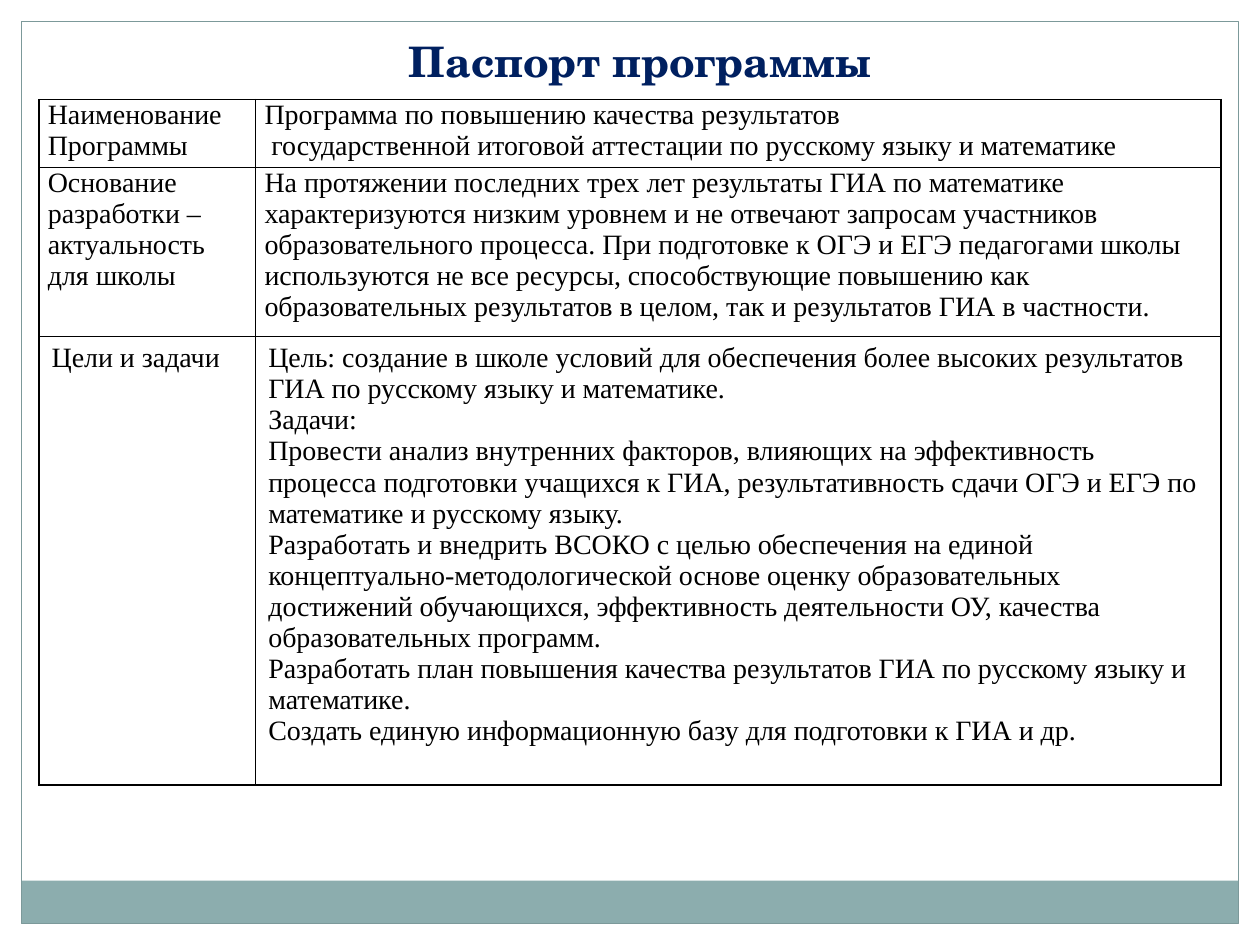
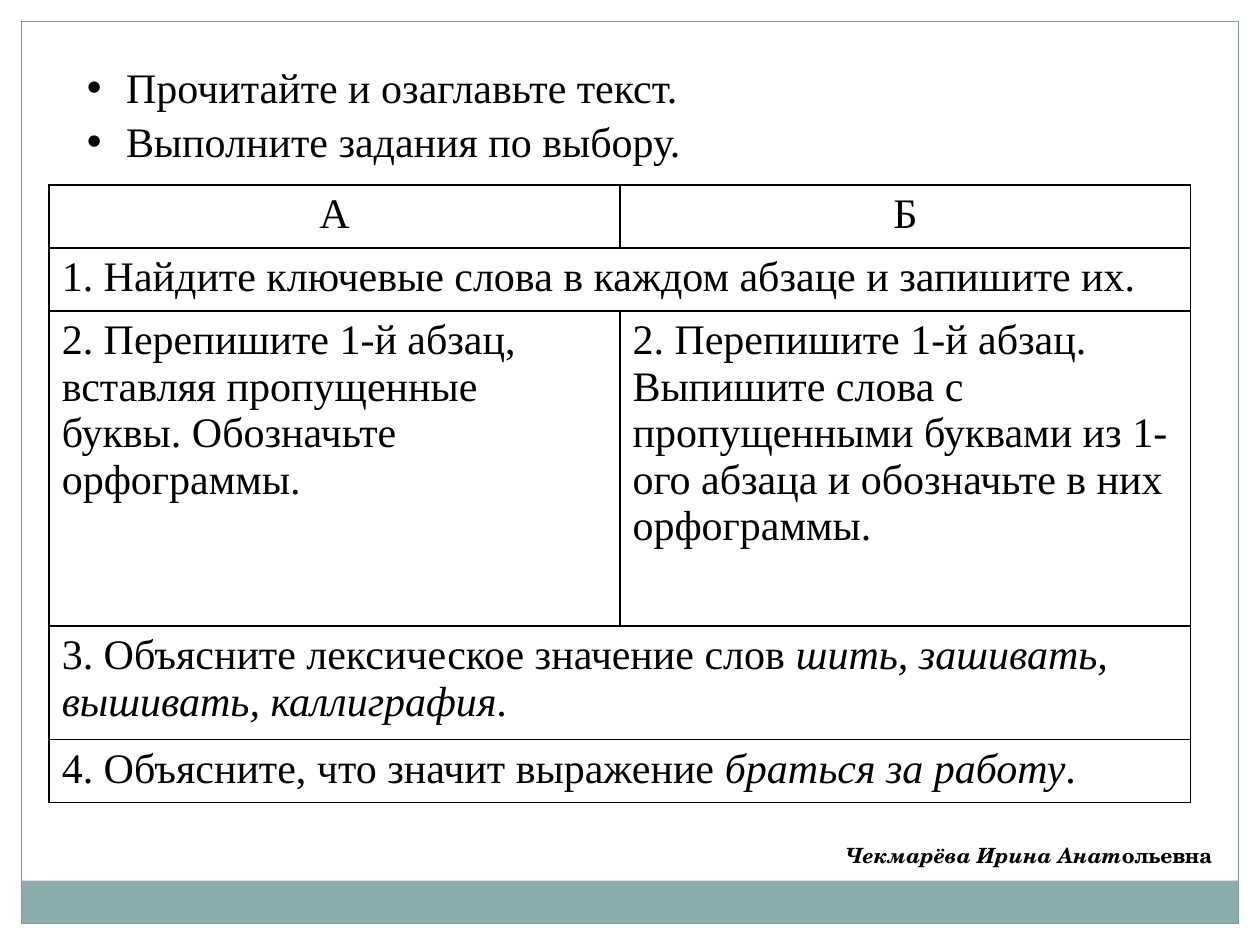
from lxml import etree
from pptx import Presentation
from pptx.dml.color import RGBColor
from pptx.enum import shapes, text
from pptx.oxml import ns
from pptx.util import Inches, Pt

SERIF, DISPLAY = "Times New Roman", "TeX Gyre Schola"
WHITE, BLACK, NAVY = "FFFFFF", "000000", "002060"
BAND, FRAME = "8CADAE", "7C999A"
NARROW_MARGINS = (0.07, 0, 0.08, 0)
NORMAL_MARGINS = (0.1, 0.05, 0.1, 0.05)

PASSPORT = [
    ["Наименование Программы",
     "Программа по повышению качества результатов\n"
     " государственной итоговой аттестации по русскому языку и математике"],
    ["Основание разработки – актуальность для школы",
     "На протяжении последних трех лет результаты ГИА по математике характеризуются "
     "низким уровнем и не отвечают запросам участников образовательного процесса. "
     "При подготовке к ОГЭ и ЕГЭ педагогами школы используются не все ресурсы, "
     "способствующие повышению как образовательных результатов в целом, так и "
     "результатов ГИА в частности."],
    ["Цели и задачи",
     "Цель: создание в школе условий для обеспечения более высоких результатов ГИА "
     "по русскому языку и математике.\n"
     "Задачи:\n"
     "Провести анализ внутренних факторов, влияющих на эффективность процесса "
     "подготовки учащихся к ГИА, результативность сдачи ОГЭ и ЕГЭ по математике и "
     "русскому языку.\n"
     "Разработать и внедрить ВСОКО с целью обеспечения на единой "
     "концептуально-методологической основе оценку образовательных достижений "
     "обучающихся, эффективность деятельности ОУ, качества образовательных программ.\n"
     "Разработать план повышения качества результатов ГИА по русскому языку и "
     "математике.\n"
     "Создать единую информационную базу для подготовки к ГИА и др."],
]

# Asterisks enclose italics; a row with one entry spans the table
TASKS = [
    ["А", "Б"],
    ["1. Найдите ключевые слова в каждом абзаце и запишите их."],
    ["2. Перепишите 1-й абзац, вставляя пропущенные буквы. Обозначьте орфограммы.",
     "2. Перепишите 1-й абзац. Выпишите слова с пропущенными буквами из 1-ого абзаца "
     "и обозначьте в них орфограммы."],
    ["3. Объясните лексическое значение слов *шить, зашивать, вышивать, каллиграфия*."],
    ["4. Объясните, что значит выражение *браться за работу*."],
]


def color(value):
    return RGBColor.from_string(value)


def place(shape, box):
    shape.left, shape.top, shape.width, shape.height = map(Inches, box)


def write(frame, content, size, font=SERIF, ink=BLACK, align=text.PP_ALIGN.LEFT, bold=False):
    """Fill a text frame: one paragraph per line, italics between asterisks."""
    frame.word_wrap = True
    for number, line in enumerate(content.split("\n")):
        paragraph = frame.paragraphs[0] if number == 0 else frame.add_paragraph()
        paragraph.alignment = align
        paragraph.font.size, paragraph.font.name = Pt(size), font
        paragraph.font.bold = bold
        paragraph.font.color.rgb = color(ink)
        for position, part in enumerate(line.split("*")):
            if part:
                run = paragraph.add_run()
                run.text = part
                if position % 2:
                    run.font.italic = True


def add_rectangle(slide, box, fill=None, line=None):
    shape = slide.shapes.add_shape(shapes.MSO_SHAPE.RECTANGLE, *map(Inches, box))
    shape.shadow.inherit = False
    if fill:
        shape.fill.solid()
        shape.fill.fore_color.rgb = color(fill)
    else:
        shape.fill.background()
    if line:
        shape.line.color.rgb = color(line)
        shape.line.width = Pt(0.75)
    else:
        shape.line.fill.background()
    return shape


def decorate_master(presentation, slide):
    """Draw the margins, bottom band and frame, then move them to the master."""
    edge = 0.17
    parts = [add_rectangle(slide, box, WHITE) for box in (
        (0, 0, 10, edge), (10 - edge, 0, edge, 7.5), (0, 0, edge, 7.5))]
    parts.append(add_rectangle(slide, (edge, 6.99, 9.66, 0.34), BAND))
    parts.append(add_rectangle(slide, (edge, edge, 9.66, 7.16), line=FRAME))
    tree = presentation.slide_master.shapes.element
    for number, part in enumerate(parts):
        part.element.nvSpPr.cNvPr.set("id", str(100 + number))
        tree.insert(2 + number, part.element)


def border_cell(cell):
    properties = cell._tc.get_or_add_tcPr()
    for number, side in enumerate(("lnL", "lnR", "lnT", "lnB")):
        line = etree.Element(ns.qn(f"a:{side}"), w=str(Pt(1)))
        fill = etree.SubElement(line, ns.qn("a:solidFill"))
        etree.SubElement(fill, ns.qn("a:srgbClr"), val=BLACK)
        properties.insert(number, line)


def add_grid(slide, left, top, widths, heights, rows, size, margins, header=False):
    """Add a plain bordered table; margins holds one set per row."""
    table = slide.shapes.add_table(
        len(heights), len(widths), Inches(left), Inches(top),
        Inches(sum(widths)), Inches(sum(heights))).table
    table.first_row = table.horz_banding = False
    for column, width in zip(table.columns, widths):
        column.width = Inches(width)
    for index, (row, height) in enumerate(zip(rows, heights)):
        table.rows[index].height = Inches(height)
        for cell in table.rows[index].cells:
            cell.fill.background()
            border_cell(cell)
            (cell.margin_left, cell.margin_top,
             cell.margin_right, cell.margin_bottom) = map(Inches, margins[index])
        if len(row) < len(widths):
            table.cell(index, 0).merge(table.cell(index, len(widths) - 1))
        centred = header and index == 0
        align = text.PP_ALIGN.CENTER if centred else text.PP_ALIGN.LEFT
        for column, content in enumerate(row):
            write(table.cell(index, column).text_frame, content, size, align=align)


def build_passport(slide):
    title = slide.shapes.title
    place(title, (0.47, 0.23, 9.22, 0.5))
    write(title.text_frame, "Паспорт программы", 24, DISPLAY, NAVY,
          text.PP_ALIGN.CENTER, bold=True)
    add_grid(slide, 0.31, 0.79, (1.72, 7.66), (0.54, 1.34, 3.56), PASSPORT, 16,
             (NARROW_MARGINS, NARROW_MARGINS, NORMAL_MARGINS))


def build_tasks(slide):
    # Instructions
    title = slide.shapes.title
    title.element.getparent().remove(title.element)
    body = slide.placeholders[1]
    place(body, (0.59, 0.44, 8.98, 1.31))
    write(body.text_frame, "Прочитайте и озаглавьте текст.\nВыполните задания по выбору.", 24)
    for paragraph in body.text_frame.paragraphs:
        paragraph.space_before = Pt(2)
        properties = paragraph._p.get_or_add_pPr()
        properties.set("marL", str(Inches(0.31)))
        properties.set("indent", str(-Inches(0.31)))
    # Tasks
    add_grid(slide, 0.39, 1.47, (4.53, 4.53), (0.5, 0.5, 2.5, 0.9, 0.5), TASKS, 24,
             [NORMAL_MARGINS] * len(TASKS), header=True)
    # Author
    author = slide.shapes.add_textbox(*map(Inches, (5, 6.64, 4.72, 0.3)))
    write(author.text_frame, "*Чекмарёва Ирина Анат*ольевна", 12, DISPLAY,
          align=text.PP_ALIGN.RIGHT, bold=True)


def main():
    presentation = Presentation()
    presentation.slide_width, presentation.slide_height = Inches(10), Inches(7.5)
    title_and_content, title_only = (presentation.slide_layouts[i] for i in (1, 5))
    passport = presentation.slides.add_slide(title_only)
    decorate_master(presentation, passport)
    build_passport(passport)
    build_tasks(presentation.slides.add_slide(title_and_content))
    presentation.save("out.pptx")


if __name__ == "__main__":
    main()
